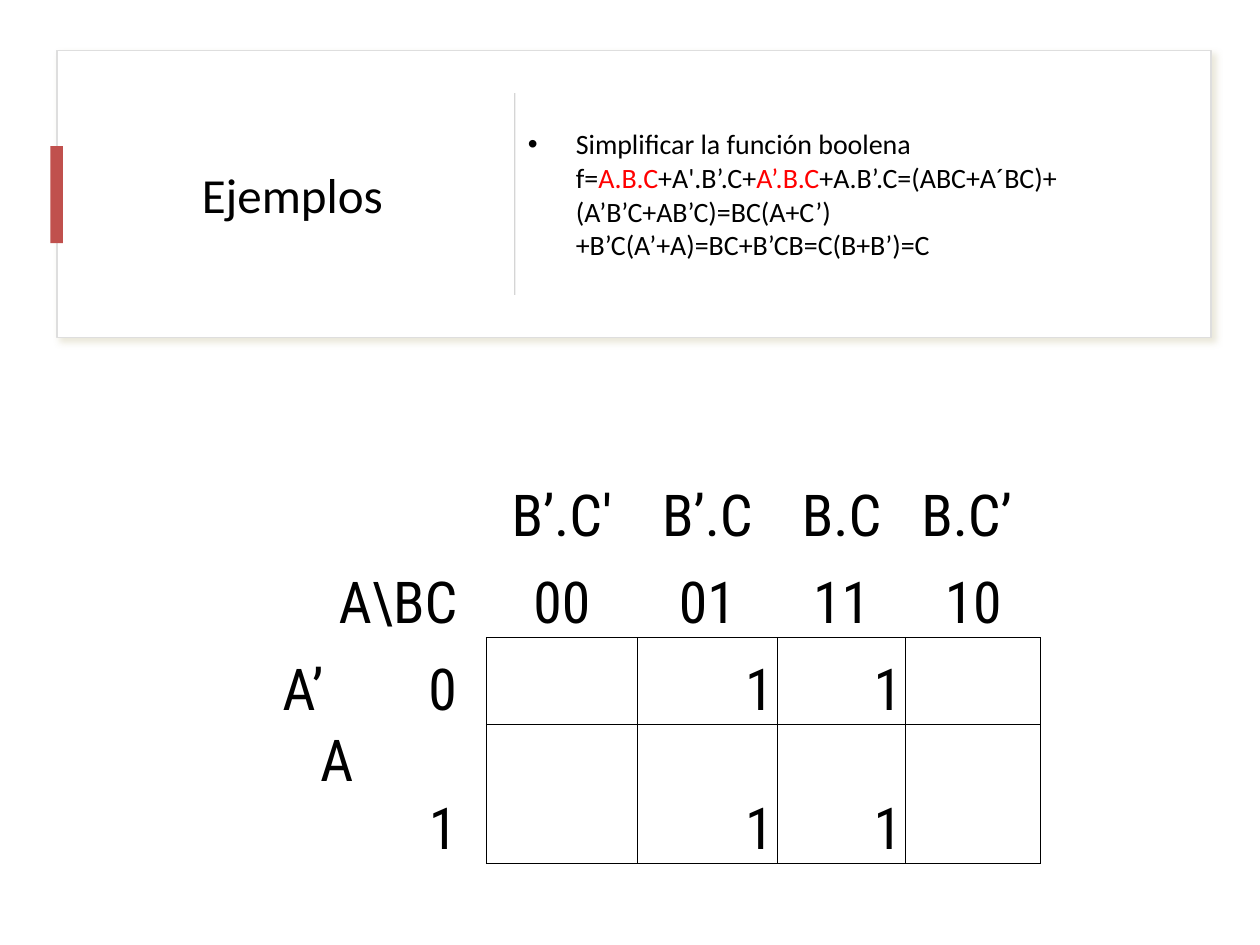
from pptx import Presentation
from pptx import util as u
from pptx.dml.color import RGBColor
from pptx.enum import shapes, text
from pptx.oxml import parse_xml
from pptx.oxml.ns import nsdecls

THEME = {
    "ink": "000000", "mark": "FF0000", "accent": "C0504D", "paper": "FFFFFF",
    "frame": "DEDEDE", "divider": "D5D5D5", "shadow": "D5D0B5",
    "text_font": "Calibri", "map_font": "Roboto Condensed",
    "title_size": 28, "body_size": 16, "map_size": 33, "rule": 0.5,
}

HEADING = "Ejemplos"
FORMULA = [
    ("Simplificar la función boolena f=", "ink"),
    ("A.B.C", "mark"),
    ("+A'.B’.C+", "ink"),
    ("A’.B.C", "mark"),
    ("+A.B’.C=(ABC+A´BC)+(A’B’C+AB’C)=BC(A+C’)+B’C(A’+A)=BC+B’CB=C(B+B’)=C", "ink"),
]
KARNAUGH = [
    ["", "B’.C'", "B’.C", "B.C", "B.C’ "],
    ["A\\BC", "00", "01", "11", "10"],
    ["\tA’\t0", "", "1", "1", ""],
    ["\tA\n1", "", "1", "1", ""],
]
LABEL_TABS = {2: (0.39, 1.55), 3: (0.69,)}
COLUMN_WIDTHS = [2.04, 1.2, 1.11, 1.02, 1.07]
ROW_HEIGHTS = [0.87, 0.69, 0.69, 1.1]
FIRST_ROW, FIRST_COL = 2, 1


def box(left, top, width, height):
    return [u.Inches(v) for v in (left, top, width, height)]


def colour(name):
    return RGBColor.from_string(THEME[name])


def style(font, face, size, ink="ink"):
    font.name, font.size, font.bold = THEME[face], u.Pt(THEME[size]), False
    font.color.rgb = colour(ink)


def add_block(slide, place, fill, line=None):
    block = slide.shapes.add_shape(shapes.MSO_SHAPE.RECTANGLE, *box(*place))
    block.shadow.inherit = False
    block.fill.solid()
    block.fill.fore_color.rgb = colour(fill)
    if line:
        block.line.color.rgb = colour(line)
        block.line.width = u.Pt(1)
    else:
        block.line.fill.background()
    return block


def add_shadow(block):
    effects = block._element.spPr.find(
        "{http://schemas.openxmlformats.org/drawingml/2006/main}effectLst")
    effects.append(parse_xml(
        f'<a:outerShdw {nsdecls("a")} blurRad="{u.Pt(4)}" dist="{u.Pt(3)}" dir="2700000">'
        f'<a:srgbClr val="{THEME["shadow"]}"><a:alpha val="50000"/></a:srgbClr></a:outerShdw>'))


def place_placeholder(holder, place):
    holder.left, holder.top, holder.width, holder.height = box(*place)
    frame = holder.text_frame
    frame.vertical_anchor = text.MSO_ANCHOR.MIDDLE
    frame.word_wrap = True
    frame.auto_size = text.MSO_AUTO_SIZE.NONE
    return frame.paragraphs[0]


def ruled_sides(row, col):
    if row >= FIRST_ROW and col >= FIRST_COL:
        return "LRTB"
    if row == FIRST_ROW - 1 and col >= FIRST_COL:
        return "B"
    return "R" if row >= FIRST_ROW else ""


def set_borders(cell, sides):
    for index, side in enumerate("LRTB"):
        paint = (f'<a:solidFill><a:srgbClr val="{THEME["ink"]}"/></a:solidFill>'
                 if side in sides else "<a:noFill/>")
        cell._tc.get_or_add_tcPr().insert(index, parse_xml(
            f'<a:ln{side} {nsdecls("a")} w="{u.Pt(THEME["rule"])}">{paint}</a:ln{side}>'))


def add_tabs(paragraph, stops):
    tabs = "".join(f'<a:tab pos="{u.Inches(s)}" algn="l"/>' for s in stops)
    paragraph._p.get_or_add_pPr().append(
        parse_xml(f'<a:tabLst {nsdecls("a")}>{tabs}</a:tabLst>'))


def fill_cell(cell, row, col, words):
    cell.fill.background()
    set_borders(cell, ruled_sides(row, col))
    if not words:
        return
    cell.vertical_anchor = text.MSO_ANCHOR.BOTTOM
    cell.margin_left = cell.margin_top = u.Inches(0.03)
    cell.margin_right = u.Inches(0.03 if col else 0.23)
    cell.margin_bottom = 0
    cell.text_frame.text = words
    for paragraph in cell.text_frame.paragraphs:
        if paragraph.text.startswith("\t"):
            paragraph.alignment = text.PP_ALIGN.LEFT
            add_tabs(paragraph, LABEL_TABS[row])
        elif col and row < FIRST_ROW:
            paragraph.alignment = text.PP_ALIGN.CENTER
        else:
            paragraph.alignment = text.PP_ALIGN.RIGHT
        for run in paragraph.runs:
            style(run.font, "map_font", "map_size")


def add_map(slide):
    place = box(1.82, 3.5, sum(COLUMN_WIDTHS), sum(ROW_HEIGHTS))
    grid = slide.shapes.add_table(len(KARNAUGH), len(COLUMN_WIDTHS), *place).table
    grid.first_row = grid.horz_banding = False
    for column, width in zip(grid.columns, COLUMN_WIDTHS):
        column.width = u.Inches(width)
    for line, height in zip(grid.rows, ROW_HEIGHTS):
        line.height = u.Inches(height)
    for row, labels in enumerate(KARNAUGH):
        for col, words in enumerate(labels):
            fill_cell(grid.cell(row, col), row, col, words)


def main():
    deck = Presentation()
    deck.slide_width, deck.slide_height = u.Inches(10), u.Inches(7.5)
    slide = deck.slides.add_slide(deck.slide_layouts[1])

    card = add_block(slide, (0.45, 0.4, 9.16, 2.28), "paper", "frame")
    add_shadow(card)
    slide.shapes._spTree.insert(2, card._element)

    heading = place_placeholder(slide.shapes.title, (0.86, 0.64, 2.92, 1.8))
    heading.text = HEADING
    heading.alignment = text.PP_ALIGN.CENTER
    style(heading.runs[0].font, "text_font", "title_size")

    add_block(slide, (0.4, 1.16, 0.1, 0.77), "accent")
    add_block(slide, (4.08, 0.74, 0.01, 1.6), "divider")

    formula = place_placeholder(slide.placeholders[1], (4.09, 0.64, 5.22, 1.8))
    formula.space_before = u.Pt(0)
    layout = formula._p.get_or_add_pPr()
    layout.set("marL", str(u.Inches(0.38)))
    layout.set("indent", str(-u.Inches(0.38)))
    layout.append(parse_xml(f'<a:buFont {nsdecls("a")} typeface="Arial"/>'))
    layout.append(parse_xml(f'<a:buChar {nsdecls("a")} char="•"/>'))
    for words, ink in FORMULA:
        term = formula.add_run()
        term.text = words
        style(term.font, "text_font", "body_size", ink)

    add_map(slide)
    deck.save("out.pptx")


if __name__ == "__main__":
    main()
